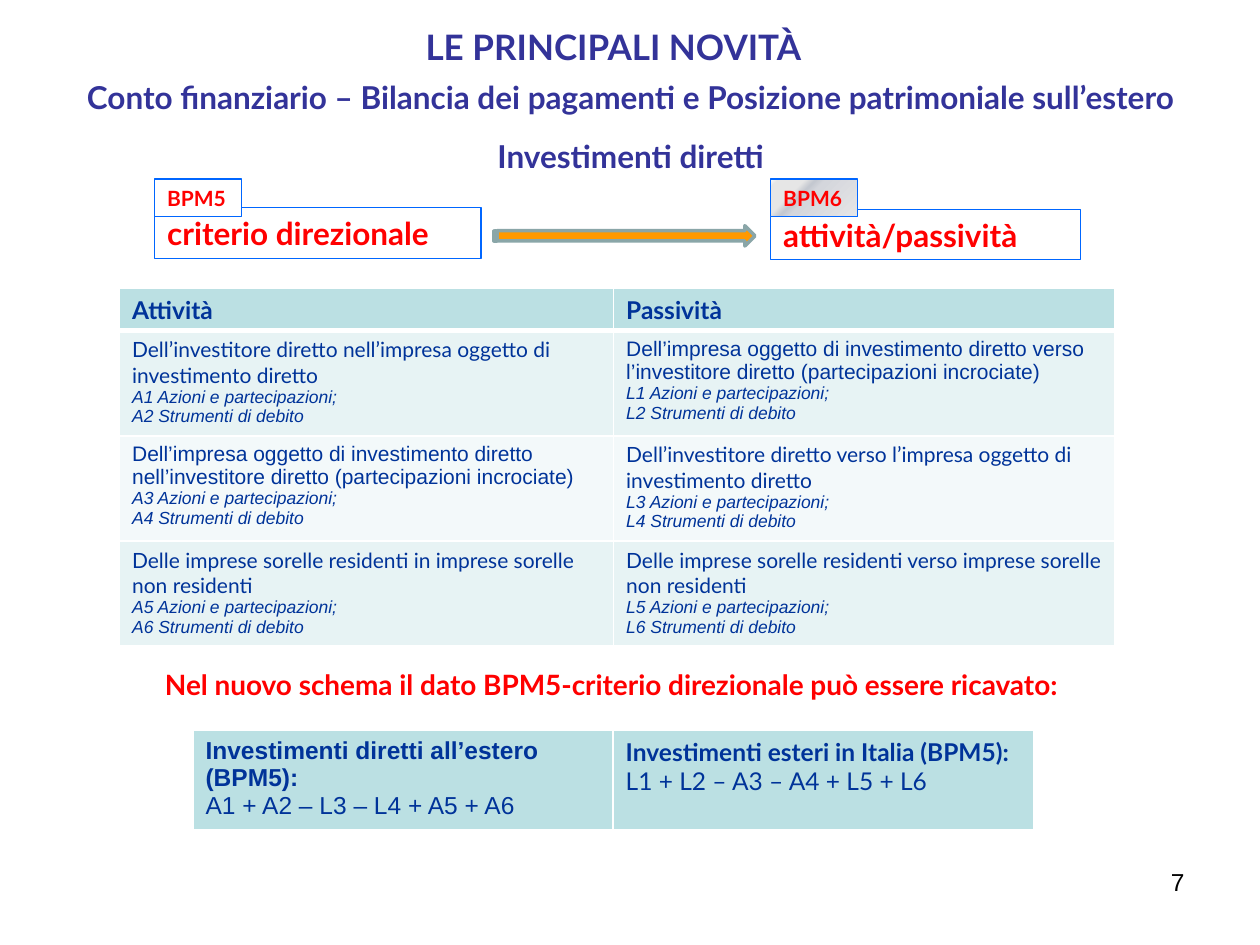
from dataclasses import dataclass

from lxml.etree import SubElement
from pptx import Presentation
from pptx.dml.color import RGBColor as Rgb
from pptx.enum.shapes import MSO_SHAPE as Shape
from pptx.enum.text import MSO_ANCHOR as Anchor, PP_ALIGN as Align
from pptx.oxml.ns import qn
from pptx.util import Cm, Pt


@dataclass(frozen=True)
class Theme:
    sans: str = "Lato"
    plain: str = "Arial"
    black: str = "000000"
    white: str = "FFFFFF"
    red: str = "FF0000"
    indigo: str = "333399"
    navy: str = "003399"
    blue: str = "0066FF"
    orange: str = "FF9900"
    steel: str = "8AA6A8"
    head_fill: str = "BBE0E3"
    odd_fill: str = "E7F3F4"
    even_fill: str = "F3F9FA"
    silver: tuple = ((0, "FFFFFF"), (7, "E6E6E6"), (28, "E6E6E6"),
                     (37, "C4C8D0"), (45, "D4D6DC"), (100, "E6E6E6"))
    title: int = 20
    heading: int = 18
    note: int = 16
    table_head: int = 14
    page_number: int = 14
    body: int = 12
    detail: int = 10


def text_format(name, size, color, bold=False, italic=False):
    return {"name": name, "size": Pt(size), "bold": bold, "italic": italic, "color": color}


class SlideBuilder:
    def __init__(self, slide, theme):
        self.slide = slide
        self.theme = theme

    def add_lines(self, frame, lines, align=Align.LEFT, gap=0):
        for index, (text, style) in enumerate(lines):
            para = frame.add_paragraph() if index else frame.paragraphs[0]
            para.alignment = align
            if index and gap:
                para.space_before = Pt(gap)
            span = para.add_run()
            span.text = text
            for key, value in style.items():
                if key == "color":
                    span.font.color.rgb = Rgb.from_string(value)
                else:
                    setattr(span.font, key, value)

    def text(self, place, lines, align=Align.LEFT, anchor=Anchor.TOP, gap=0):
        frame = self.slide.shapes.add_textbox(*map(Cm, place)).text_frame
        frame.word_wrap = True
        frame.vertical_anchor = anchor
        self.add_lines(frame, lines, align, gap)

    def shape(self, kind, place, fill, line, width):
        shape = self.slide.shapes.add_shape(kind, *map(Cm, place))
        shape.shadow.inherit = False
        if fill is None:
            shape.fill.background()
        elif isinstance(fill, str):
            shape.fill.solid()
            shape.fill.fore_color.rgb = Rgb.from_string(fill)
        else:
            self.gradient(shape, fill)
        shape.line.color.rgb = Rgb.from_string(line)
        shape.line.width = Pt(width)
        return shape

    def gradient(self, shape, stops):
        shape.fill.gradient()
        shape.fill.gradient_angle = 315
        stop_list = shape._element.spPr.find(".//" + qn("a:gsLst"))
        for old_stop in list(stop_list):
            stop_list.remove(old_stop)
        for position, color in stops:
            stop = SubElement(stop_list, qn("a:gs"), pos=str(position * 1000))
            SubElement(stop, qn("a:srgbClr"), val=color)

    def label(self, place, text, size, fill=None, wrap=True):
        theme = self.theme
        box = self.shape(Shape.RECTANGLE, place, fill, theme.blue, 0.75)
        frame = box.text_frame
        frame.word_wrap = wrap
        frame.vertical_anchor = Anchor.MIDDLE
        self.add_lines(frame, [(text, text_format(theme.sans, size, theme.red, bold=True))])

    def borders(self, cell, widths):
        properties = cell._tc.get_or_add_tcPr()
        for side, width in widths.items():
            line = SubElement(properties, qn("a:ln" + side), w=str(Pt(width)))
            fill = SubElement(line, qn("a:solidFill"))
            SubElement(fill, qn("a:srgbClr"), val=self.theme.white)

    def table(self, left, top, widths, heights, rows):
        theme = self.theme
        table = self.slide.shapes.add_table(
            len(rows), len(widths), Cm(left), Cm(top), Cm(sum(widths)), Cm(sum(heights))).table
        for column, width in zip(table.columns, widths):
            column.width = Cm(width)
        for index, (row, height, cells) in enumerate(zip(table.rows, heights, rows)):
            row.height = Cm(height)
            color = theme.head_fill if index == 0 else (theme.even_fill, theme.odd_fill)[index % 2]
            edges = {"L": 1, "R": 1, "T": 3 if index == 1 else 1, "B": 3 if index == 0 else 1}
            for cell, lines in zip(row.cells, cells):
                self.borders(cell, edges)
                cell.fill.solid()
                cell.fill.fore_color.rgb = Rgb.from_string(color)
                self.add_lines(cell.text_frame, lines)


def main():
    theme = Theme()
    deck = Presentation()
    deck.slide_width, deck.slide_height = Cm(25.4), Cm(19.05)
    page = SlideBuilder(deck.slides.add_slide(deck.slide_layouts[6]), theme)

    page.text((18.21, 17.35, 5.92, 1.32),
              [("7", text_format(theme.plain, theme.page_number, theme.black))], Align.RIGHT)

    page.label((3.12, 4.19, 6.58, 1.02), "criterio direzionale", theme.heading)
    page.label((15.54, 4.22, 6.25, 1.02), "attività/passività", theme.heading)
    page.shape(Shape.STRIPED_RIGHT_ARROW, (9.96, 4.55, 5.26, 0.41),
               theme.orange, theme.steel, 2)

    head = text_format(theme.sans, theme.table_head, theme.navy, bold=True)
    detail = text_format(theme.plain, theme.detail, theme.navy, italic=True)
    entries = [
        [("Dell’investitore diretto nell’impresa oggetto di investimento diretto", theme.sans),
         ("Dell’impresa oggetto di investimento diretto verso l’investitore diretto "
          "(partecipazioni incrociate)", theme.plain)],
        [("Dell’impresa oggetto di investimento diretto nell’investitore diretto "
          "(partecipazioni incrociate)", theme.plain),
         ("Dell’investitore diretto verso l’impresa oggetto di investimento diretto", theme.sans)],
        [("Delle imprese sorelle residenti in imprese sorelle non residenti", theme.sans),
         ("Delle imprese sorelle residenti verso imprese sorelle non residenti", theme.sans)],
    ]
    rows = [[[("Attività", head)], [("Passività", head)]]]
    for index, pair in enumerate(entries):
        first = 2 * index + 1
        rows.append([
            [(text, text_format(font, theme.body, theme.navy)),
             (f"{letter}{first} Azioni e partecipazioni;", detail),
             (f"{letter}{first + 1} Strumenti di debito", detail)]
            for letter, (text, font) in zip("AL", pair)])
    page.table(2.41, 5.82, [9.96, 10.11], [0.84, 2.11, 2.11, 2.11], rows)

    page.text((0.58, 13.34, 23.5, 0.94),
              [("Nel nuovo schema il dato BPM5-criterio direzionale può essere ricavato:",
                text_format(theme.sans, theme.note, theme.red, bold=True))], Align.CENTER)

    formulas = [
        ("Investimenti diretti all’estero (BPM5):", "A1 + A2 – L3 – L4 + A5 + A6", theme.plain),
        ("Investimenti esteri in Italia (BPM5):", "L1 + L2 – A3 – A4 + L5 + L6", theme.sans),
    ]
    page.table(3.89, 14.73, [8.47, 8.47], [2], [[
        [(name, text_format(font, theme.table_head, theme.navy, bold=True)),
         (formula, text_format(font, theme.table_head, theme.navy))]
        for name, formula, font in formulas]])

    for left, text, fill in [(3.12, "BPM5", theme.white), (15.54, "BPM6", theme.silver)]:
        page.label((left, 3.61, 1.75, 0.76), text, theme.body, fill, wrap=False)

    page.text((8.33, 0.38, 9.02, 1.12),
              [("LE PRINCIPALI NOVITÀ",
                text_format(theme.sans, theme.title, theme.indigo, bold=True))])
    heading = text_format(theme.sans, theme.heading, theme.indigo, bold=True)
    page.text((-0.15, 1.4, 25.73, 2.31),
              [("Conto finanziario – Bilancia dei pagamenti e Posizione patrimoniale sull’estero",
                heading),
               ("Investimenti diretti", heading)],
              Align.CENTER, Anchor.MIDDLE, gap=12)

    deck.save("out.pptx")


if __name__ == "__main__":
    main()
